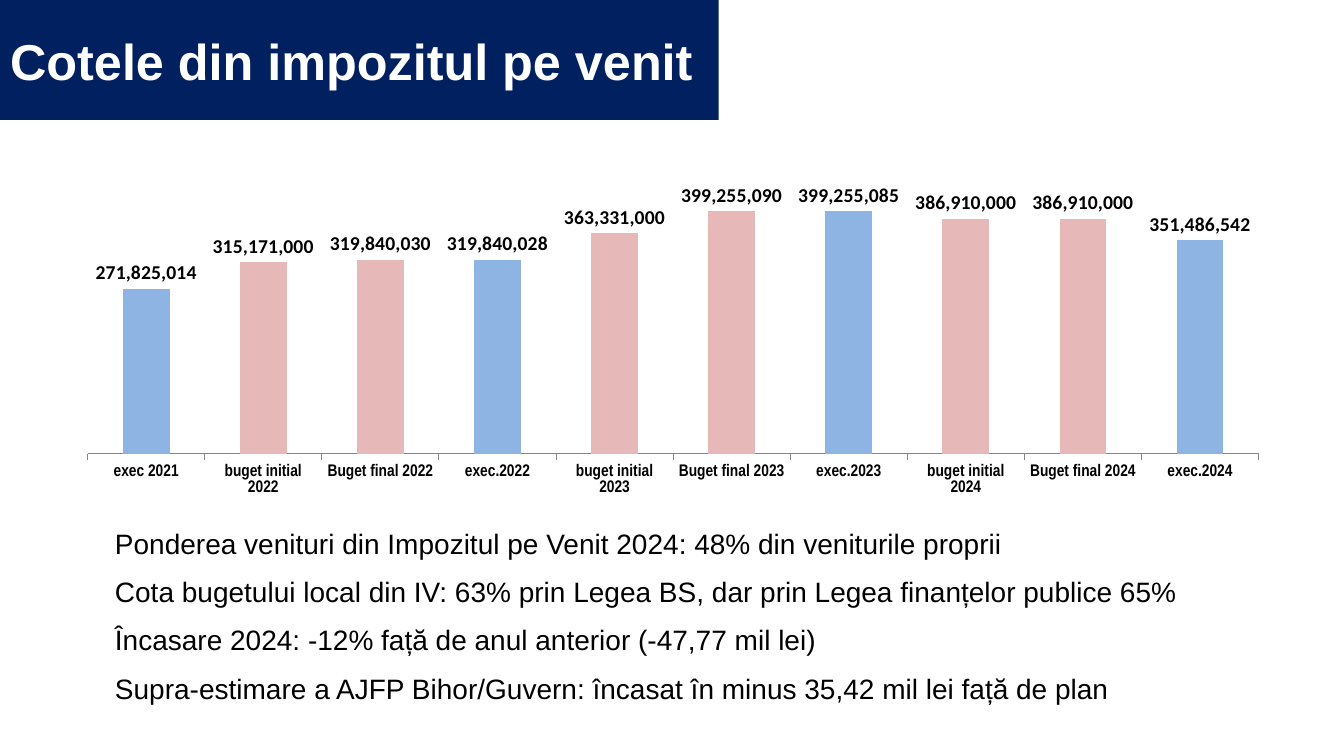
import lxml.etree
import pptx
import pptx.chart.data
import pptx.dml.color
import pptx.enum.chart
import pptx.enum.text
import pptx.oxml
import pptx.oxml.ns
import pptx.util

Pt = pptx.util.Pt
COLORS = {
    "navy": "002060",
    "white": "FFFFFF",
    "black": "000000",
    "executed": "8EB4E3",
    "planned": "E6B9B8",
    "axis": "868686",
}
REVENUES = [
    ("exec 2021", 271825014),
    ("buget initial 2022", 315171000),
    ("Buget final 2022", 319840030),
    ("exec.2022", 319840028),
    ("buget initial 2023", 363331000),
    ("Buget final 2023", 399255090),
    ("exec.2023", 399255085),
    ("buget initial 2024", 386910000),
    ("Buget final 2024", 386910000),
    ("exec.2024", 351486542),
]
FINDINGS = [
    "Ponderea venituri din Impozitul pe Venit 2024: 48% din veniturile proprii",
    "Cota bugetului local din IV: 63% prin Legea BS, dar prin Legea finanțelor publice 65%",
    "Încasare 2024: -12% față de anul anterior (-47,77 mil lei)",
    "Supra-estimare a AJFP Bihor/Guvern: încasat în minus 35,42 mil lei față de plan",
]
PLOT_AREA = {"x": 0.016, "y": 0.004, "w": 0.977, "h": 0.839}


def color(name):
    """Return the named color of the palette."""
    return pptx.dml.color.RGBColor.from_string(COLORS[name])


def paint(item, name):
    """Give a shape, line or chart point a solid fill."""
    item.fill.solid()
    item.fill.fore_color.rgb = color(name)


def style_font(font, face, size, name="black", bold=False):
    """Set the face, size, color and weight of a font."""
    font.name = face
    font.size = Pt(size)
    font.bold = bold
    font.color.rgb = color(name)


def place(shape, left, top, width, height):
    """Move and size a shape, in points."""
    shape.left, shape.top = Pt(left), Pt(top)
    shape.width, shape.height = Pt(width), Pt(height)


def fill_title(box, text):
    """Write the title on its navy band."""
    place(box, 0, 0, 513.36, 85.68)
    paint(box, "navy")
    frame = box.text_frame
    frame.text = text
    frame.auto_size = pptx.enum.text.MSO_AUTO_SIZE.NONE
    frame.vertical_anchor = pptx.enum.text.MSO_ANCHOR.MIDDLE
    para = frame.paragraphs[0]
    para.alignment = pptx.enum.text.PP_ALIGN.LEFT
    for span in para.runs:
        style_font(span.font, "Arial", 36, "white", True)


def fill_list(box, lines):
    """Write the findings as justified lines without bullets."""
    place(box, 74.88, 372.24, 810.72, 133.2)
    frame = box.text_frame
    frame.text = "\n".join(lines)
    frame.auto_size = pptx.enum.text.MSO_AUTO_SIZE.NONE
    for index, para in enumerate(frame.paragraphs):
        properties = para._p.get_or_add_pPr()
        properties.set("marL", "0")
        properties.set("indent", "0")
        lxml.etree.SubElement(properties, pptx.oxml.ns.qn("a:buNone"))
        para.alignment = pptx.enum.text.PP_ALIGN.JUSTIFY
        para.line_spacing = 1.0
        para.space_before = Pt(10.5 if index else 0)
        for span in para.runs:
            style_font(span.font, "Arial", 20)


def set_plot_area(chart, area):
    """Fix the inner plot area as fractions of the chart."""
    plot_area = chart.element.xpath("c:chart/c:plotArea")[0]
    for layout in plot_area.xpath("c:layout"):
        plot_area.remove(layout)
    modes = "".join(f'<c:{key}Mode val="edge"/>' for key in ("x", "y"))
    sizes = "".join(f'<c:{key} val="{value}"/>' for key, value in area.items())
    plot_area.insert(0, pptx.oxml.parse_xml(
        f'<c:layout {pptx.oxml.ns.nsdecls("c")}><c:manualLayout>'
        f'<c:layoutTarget val="inner"/>{modes}{sizes}'
        '</c:manualLayout></c:layout>'))


def style_axes(chart):
    """Show the category axis only and fix the value range."""
    values = chart.value_axis
    values.visible = False
    values.has_major_gridlines = False
    values.minimum_scale = 0
    values.maximum_scale = 450000000
    categories = chart.category_axis
    categories.major_tick_mark = pptx.enum.chart.XL_TICK_MARK.OUTSIDE
    categories.format.line.color.rgb = color("axis")
    categories.format.line.width = Pt(0.75)
    style_font(categories.tick_labels.font, "Arial Narrow", 12, bold=True)


def style_columns(plot):
    """Label the columns and color them by kind of budget figure."""
    plot.gap_width = 150
    plot.vary_by_categories = False
    plot.has_data_labels = True
    labels = plot.data_labels
    labels.show_value = True
    labels.number_format = "#,##0"
    labels.number_format_is_linked = False
    labels.position = pptx.enum.chart.XL_LABEL_POSITION.OUTSIDE_END
    style_font(labels.font, "Calibri", 14, bold=True)
    for index, (category, _) in enumerate(REVENUES):
        kind = "executed" if category.startswith("exec") else "planned"
        paint(plot.series[0].points[index].format, kind)


def add_revenue_chart(page):
    """Add the column chart of planned and executed revenues."""
    data = pptx.chart.data.CategoryChartData(number_format="#,##0")
    categories, values = zip(*REVENUES)
    data.categories = categories
    data.add_series("Series 1", values)
    chart = page.shapes.add_chart(
        pptx.enum.chart.XL_CHART_TYPE.COLUMN_CLUSTERED,
        Pt(48.96), Pt(128.16), Pt(856.08), Pt(232.56), data).chart
    chart.has_legend = False
    chart.has_title = False
    style_font(chart.font, "Calibri", 10)
    style_axes(chart)
    style_columns(chart.plots[0])
    set_plot_area(chart, PLOT_AREA)


def main():
    """Build the slide and save it."""
    deck = pptx.Presentation()
    deck.slide_width, deck.slide_height = Pt(960), Pt(540)
    page = deck.slides.add_slide(deck.slide_layouts[1])
    fill_title(page.shapes.title, "Cotele din impozitul pe venit")
    fill_list(page.placeholders[1], FINDINGS)
    add_revenue_chart(page)
    deck.save("out.pptx")


if __name__ == "__main__":
    main()
